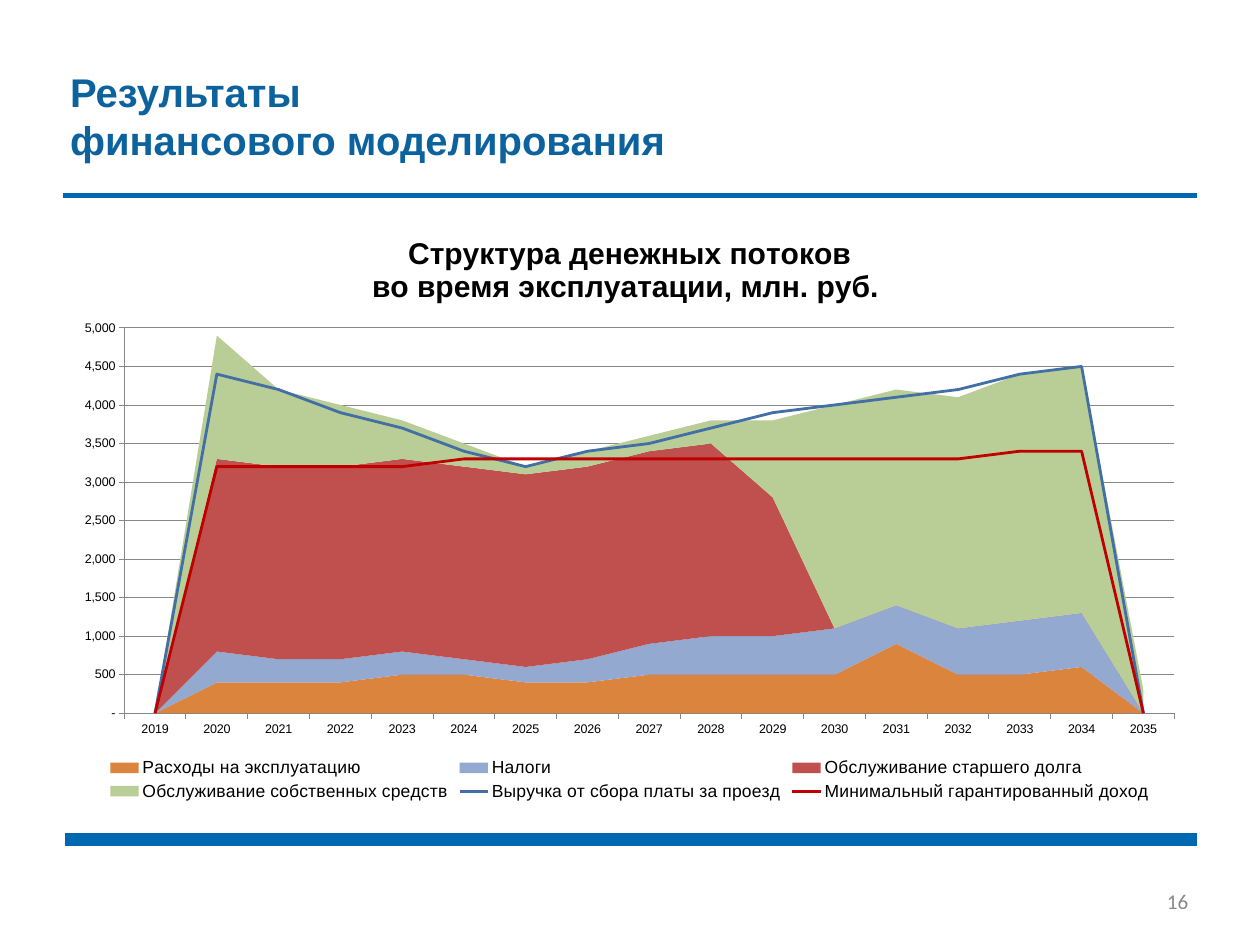
from lxml import etree
from pptx import Presentation
from pptx.chart.data import CategoryChartData
from pptx.dml.color import RGBColor
from pptx.enum.chart import XL_CHART_TYPE, XL_LEGEND_POSITION, XL_MARKER_STYLE, XL_TICK_MARK
from pptx.enum.shapes import MSO_CONNECTOR
from pptx.enum.text import MSO_ANCHOR, PP_ALIGN
from pptx.oxml import parse_xml
from pptx.oxml.ns import nsdecls, qn
from pptx.util import Inches, Pt

AREA = XL_CHART_TYPE.AREA_STACKED
BOTTOM = XL_LEGEND_POSITION.BOTTOM
BARE = XL_MARKER_STYLE.NONE
OUT = XL_TICK_MARK.OUTSIDE
STRAIGHT = MSO_CONNECTOR.STRAIGHT
TOP, MIDDLE = MSO_ANCHOR.TOP, MSO_ANCHOR.MIDDLE
LEFT, RIGHT = PP_ALIGN.LEFT, PP_ALIGN.RIGHT

COLORS = {
    "rule": "0068B1", "title": "0B629D", "number": "898989", "text": "000000",
    "grid": "878787", "costs": "DB843D", "taxes": "93A9CF", "debt": "C0504D",
    "equity": "B9CD96", "revenue": "416FA6", "minimum": "C00000",
}
YEARS = [str(year) for year in range(2019, 2036)]
AREAS = [
    ("Расходы на эксплуатацию", "costs",
     [0, 400, 400, 400, 500, 500, 400, 400, 500, 500, 500, 500, 900, 500, 500, 600, 0]),
    ("Налоги", "taxes",
     [0, 400, 300, 300, 300, 200, 200, 300, 400, 500, 500, 600, 500, 600, 700, 700, 0]),
    ("Обслуживание старшего долга", "debt",
     [0] + [2500] * 9 + [1800] + [0] * 6),
    ("Обслуживание собственных средств", "equity",
     [0, 1600, 1000, 800, 500, 300, 100, 200, 200, 300, 1000, 2900, 2800, 3000, 3200, 3200, 300]),
]
LINES = [
    ("Выручка от сбора платы за проезд", "revenue",
     [None, 4400, 4200, 3900, 3700, 3400, 3200, 3400, 3500, 3700, 3900, 4000, 4100, 4200,
      4400, 4500, None]),
    ("Минимальный гарантированный доход", "minimum",
     [None] + [3200] * 4 + [3300] * 9 + [3400] * 2 + [None]),
]


def rgb(name):
    return RGBColor.from_string(COLORS[name])


def style(font, size, color, bold=False, face="Arial"):
    font.name, font.size, font.bold = face, Pt(size), bold
    font.color.rgb = rgb(color)


def add_rule(slide, left, top, width):
    rule = slide.shapes.add_connector(
        STRAIGHT, Inches(left), Inches(top), Inches(13.3), Inches(top))
    rule.line.color.rgb = rgb("rule")
    rule.line.width = Pt(width)
    etree.SubElement(rule.element.spPr, qn("a:effectLst"))


def add_text(slide, box, text, align, anchor, **look):
    frame = slide.shapes.add_textbox(*map(Inches, box)).text_frame
    frame.word_wrap = True
    frame.vertical_anchor = anchor
    frame.text = text
    for para in frame.paragraphs:
        para.alignment = align
        for run in para.runs:
            style(run.font, **look)


def split_lines(chart):
    """Move the series after the areas into a line plot on the same axes."""
    area = chart.plots[0]._element
    plot = parse_xml(
        f'<c:lineChart {nsdecls("c")}><c:grouping val="standard"/>'
        '<c:varyColors val="0"/><c:marker val="1"/></c:lineChart>')
    mark = plot.find(qn("c:marker"))
    for ser in area.findall(qn("c:ser"))[len(AREAS):]:
        mark.addprevious(ser)
    for axis in area.findall(qn("c:axId")):
        etree.SubElement(plot, qn("c:axId")).set("val", axis.get("val"))
    area.addnext(plot)


def style_axes(chart):
    for axis in (chart.category_axis, chart.value_axis):
        axis.major_tick_mark = OUT
        axis.format.line.color.rgb = rgb("grid")
        style(axis.tick_labels.font, 10, "text")
    value = chart.value_axis
    value.minimum_scale, value.maximum_scale, value.major_unit = 0, 5000, 500
    value.has_major_gridlines = True
    value.major_gridlines.format.line.color.rgb = rgb("grid")
    value.tick_labels.number_format = r"#,##0;\(#,##0\);\-"
    value.tick_labels.number_format_is_linked = False
    value._element.find(qn("c:crossBetween")).set("val", "between")


def style_series(chart):
    areas, lines = chart.plots
    areas.vary_by_categories = False
    for ser, (_, color, _) in zip(areas.series, AREAS):
        ser.format.fill.solid()
        ser.format.fill.fore_color.rgb = rgb(color)
    for ser, (_, color, _) in zip(lines.series, LINES):
        ser.smooth = False
        ser.marker.style = BARE
        ser.format.line.color.rgb = rgb(color)
        ser.format.line.width = Pt(2.25)


def add_flows(slide):
    data = CategoryChartData(number_format="#,##0")
    data.categories = YEARS
    for name, _, vals in AREAS + LINES:
        data.add_series(name, vals)
    box = map(Inches, (0.69, 2.4, 12.61, 6.54))
    chart = slide.shapes.add_chart(AREA, *box, data).chart
    style(chart.font, 10, "text")
    split_lines(chart)
    style_series(chart)
    style_axes(chart)
    blanks = chart._chartSpace.chart.find(qn("c:dispBlanksAs"))
    blanks.set("val", "zero")

    chart.has_title = True
    title = chart.chart_title
    title.include_in_layout = False
    title.text_frame.text = "Структура денежных потоков\nво время эксплуатации, млн. руб. "
    for para in title.text_frame.paragraphs:
        style(para.runs[0].font, 24, "text", bold=True)

    chart.has_legend = True
    chart.legend.position = BOTTOM
    chart.legend.include_in_layout = False
    style(chart.legend.font, 14, "text")


def main():
    deck = Presentation()
    deck.slide_width, deck.slide_height = Inches(14), Inches(10.5)
    slide = deck.slides.add_slide(deck.slide_layouts[6])
    add_rule(slide, 0.72, 9.33, 10.5)
    add_rule(slide, 0.7, 2.17, 4)
    add_text(slide, (9.65, 9.73, 3.65, 0.56), "16", RIGHT, MIDDLE,
             size=16.8, color="number", face="Calibri")
    add_text(slide, (0.68, 0.7, 9.43, 1.18), "Результаты\nфинансового моделирования",
             LEFT, TOP, size=32, color="title", bold=True)
    add_flows(slide)
    deck.save("out.pptx")


if __name__ == "__main__":
    main()
